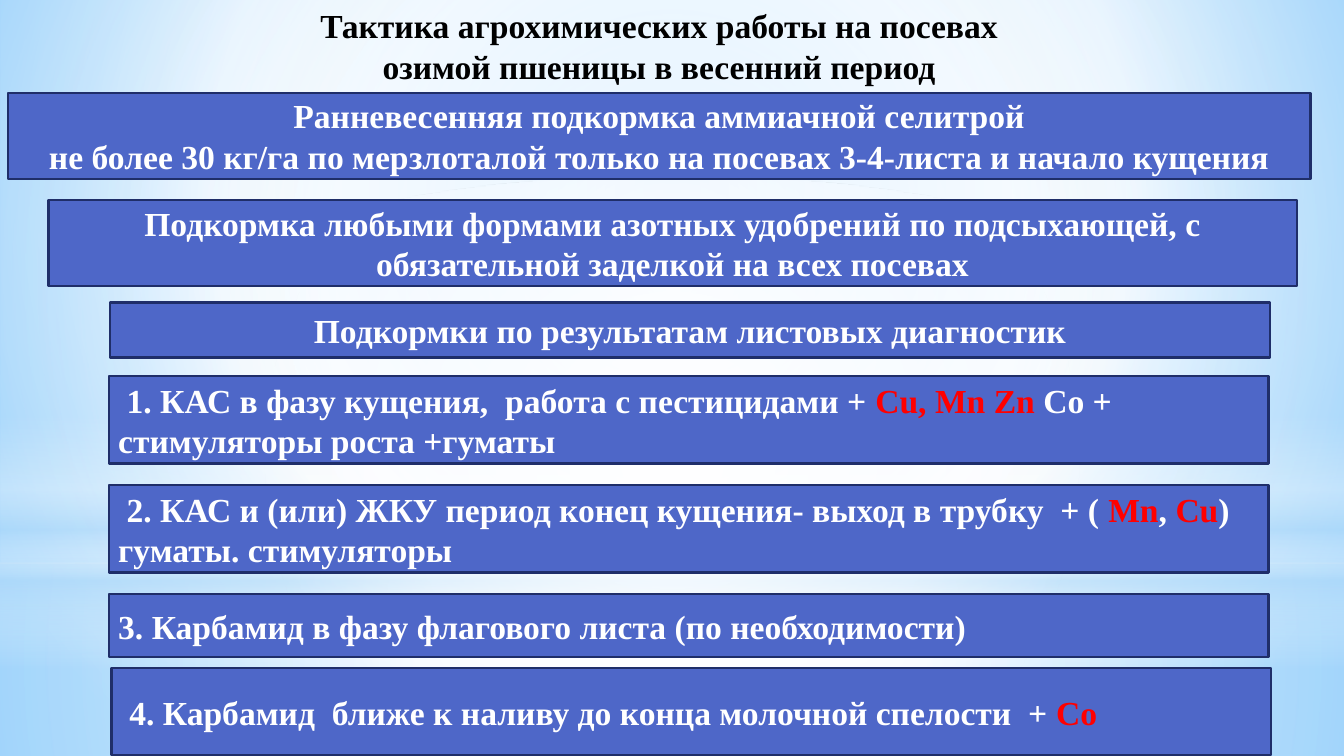
from dataclasses import dataclass
from typing import Optional

from lxml.etree import SubElement
from pptx import Presentation
from pptx.dml.color import RGBColor
from pptx.enum.shapes import MSO_SHAPE as Shape
from pptx.enum.text import MSO_ANCHOR as Anchor, PP_ALIGN as Align
from pptx.oxml.ns import qn
from pptx.util import Inches, Pt

COLORS = {
    "black": "000000",
    "white": "FFFFFF",
    "red": "FF0000",
    "bar": "4E67C8",
    "border": "1F2E69",
    "sky": "9ED5FF",
    "deep": "5BB9FF",
    "haze": "B4DCFA",
}
FONT = "Times New Roman"
CENTER = (50, 50, 50, 50)


@dataclass
class Gradient:
    stops: list[tuple[int, str, int]]
    focus: Optional[tuple[int, int, int, int]] = CENTER


@dataclass
class Glow:
    kind: Shape
    top: float
    height: float
    gradient: Gradient


@dataclass
class Bar:
    left: float
    top: float
    width: float
    height: float
    lines: list[str]
    align: Align = Align.LEFT


BACKDROP = Gradient([(0, "sky", 100), (60, "white", 100), (100, "deep", 100)], (20, 10, 20, 60))

GLOWS = [
    Glow(Shape.RECTANGLE, 4.19, 1.44,
         Gradient([(0, "white", 91), (37, "white", 76), (100, "haze", 79)])),
    Glow(Shape.RECTANGLE, 0, 4.19,
         Gradient([(0, "white", 89), (48, "white", 62), (100, "haze", 79)])),
    Glow(Shape.RECTANGLE, 3.09, 1.88,
         Gradient([(0, "white", 0), (29, "white", 30), (45, "haze", 40),
                   (55, "white", 26), (65, "haze", 60), (100, "white", 0)], None)),
    Glow(Shape.OVAL, 1.31, 4.19, Gradient([(0, "white", 100), (56, "white", 0)])),
]

TITLE = ["Тактика агрохимических работы на посевах", "озимой пшеницы в весенний период"]

BARS = [
    Bar(0.06, 0.69, 9.69, 0.64,
        ["Ранневесенняя подкормка аммиачной селитрой",
         "не более 30 кг/га по мерзлоталой только на посевах 3-4-листа и начало кущения"],
        Align.CENTER),
    Bar(0.36, 1.49, 9.29, 0.64,
        ["Подкормка любыми формами азотных удобрений по подсыхающей, "
         "с обязательной заделкой на всех посевах"], Align.CENTER),
    Bar(0.82, 2.25, 8.63, 0.41, ["Подкормки по результатам листовых диагностик"], Align.CENTER),
    Bar(0.81, 2.8, 8.63, 0.65,
        [" 1. КАС в фазу кущения,  работа с пестицидами + |Cu, Mn Zn| Со + "
         "стимуляторы роста +гуматы"]),
    Bar(0.81, 3.61, 8.63, 0.65,
        [" 2. КАС и (или) ЖКУ период конец кущения- выход в трубку  + ( |Mn|, |Cu|) "
         "гуматы. стимуляторы"]),
    Bar(0.81, 4.42, 8.63, 0.47, ["3. Карбамид в фазу флагового листа (по необходимости)"]),
    Bar(0.83, 4.97, 8.63, 0.65,
        [" 4. Карбамид  ближе к наливу до конца молочной спелости  + |Со"]),
]


def rgb(name: str) -> RGBColor:
    return RGBColor.from_string(COLORS[name])


def apply_gradient(owner, fill, gradient: Gradient) -> None:
    fill.gradient()
    grad = owner._element.find(".//" + qn("a:gradFill"))
    for child in list(grad):
        grad.remove(child)
    stops = SubElement(grad, qn("a:gsLst"))
    for position, color, opacity in gradient.stops:
        stop = SubElement(stops, qn("a:gs"), pos=str(position * 1000))
        clr = SubElement(stop, qn("a:srgbClr"), val=COLORS[color])
        if opacity < 100:
            SubElement(clr, qn("a:alpha"), val=str(opacity * 1000))
    if gradient.focus is None:
        SubElement(grad, qn("a:lin"), ang="5400000", scaled="0")
        return
    route = SubElement(grad, qn("a:path"), path="circle")
    sides = {side: str(v * 1000) for side, v in zip("ltrb", gradient.focus)}
    SubElement(route, qn("a:fillToRect"), **sides)


def write_lines(tf, lines: list[str], color: str, align: Align) -> None:
    tf.margin_left = tf.margin_right = Inches(0.07)
    tf.margin_top = tf.margin_bottom = Inches(0.04)
    for i, line in enumerate(lines):
        p = tf.add_paragraph() if i else tf.paragraphs[0]
        p.alignment = align
        p.font.name = FONT
        p.font.size = Pt(18)
        p.font.bold = True
        p.font.color.rgb = rgb(color)
        for j, part in enumerate(line.split("|")):
            r = p.add_run()
            r.text = part
            if j % 2:
                r.font.color.rgb = rgb("red")


def draw_glow(s, glow: Glow) -> None:
    sp = s.shapes.add_shape(glow.kind, Inches(0), Inches(glow.top),
                            Inches(10), Inches(glow.height))
    sp.shadow.inherit = False
    sp.line.fill.background()
    apply_gradient(sp, sp.fill, glow.gradient)


def draw_bar(s, bar: Bar) -> None:
    sp = s.shapes.add_shape(Shape.RECTANGLE, Inches(bar.left), Inches(bar.top),
                            Inches(bar.width), Inches(bar.height))
    sp.shadow.inherit = False
    sp.fill.solid()
    sp.fill.fore_color.rgb = rgb("bar")
    sp.line.color.rgb = rgb("border")
    sp.line.width = Pt(1.25)
    tf = sp.text_frame
    tf.word_wrap = True
    tf.vertical_anchor = Anchor.MIDDLE
    write_lines(tf, bar.lines, "white", bar.align)


def main() -> None:
    prs = Presentation()
    prs.slide_width = Inches(10)
    prs.slide_height = Inches(10 * 9 / 16)
    s = prs.slides.add_slide(prs.slide_layouts[6])
    apply_gradient(s, s.background.fill, BACKDROP)
    for glow in GLOWS:
        draw_glow(s, glow)
    title = s.shapes.add_textbox(Inches(2.28), Inches(0), Inches(5.25), Inches(0.68))
    title.text_frame.word_wrap = False
    write_lines(title.text_frame, TITLE, "black", Align.CENTER)
    for bar in BARS:
        draw_bar(s, bar)
    prs.save("out.pptx")


if __name__ == "__main__":
    main()
